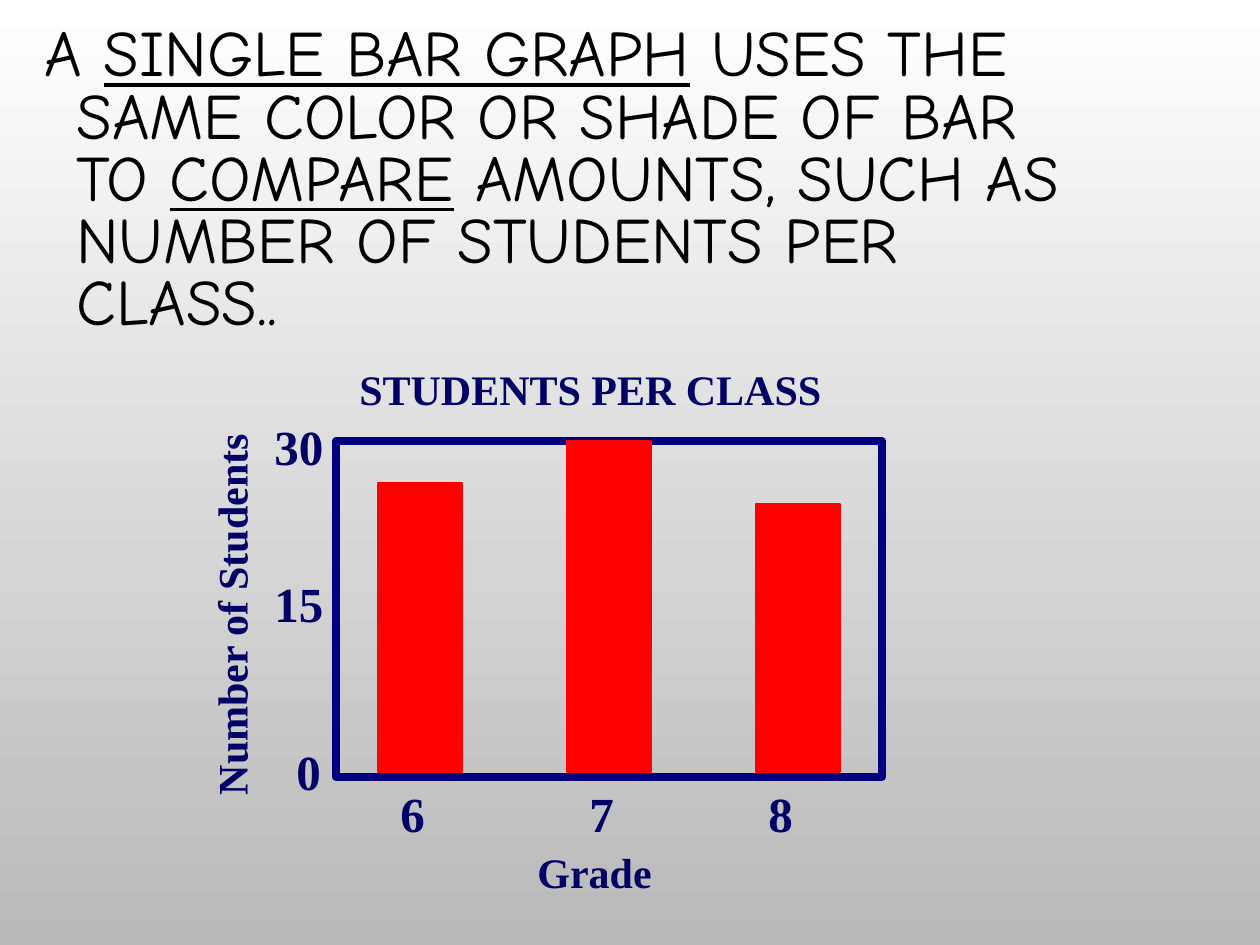
from pptx import Presentation
from pptx.dml.color import RGBColor
from pptx.enum.shapes import MSO_SHAPE
from pptx.util import Emu, Pt

WHITE = RGBColor(0xFF, 0xFF, 0xFF)
GREY = RGBColor(0xB9, 0xB9, 0xB9)
BLACK = RGBColor(0, 0, 0)
NAVY = RGBColor(0, 0, 0x80)
INK = RGBColor(0, 0, 0x66)
RED = RGBColor(0xFF, 0, 0)

INTRO = [
    ("A ", False),
    ("SINGLE BAR GRAPH", True),
    (" USES THE SAME COLOR OR SHADE OF BAR TO ", False),
    ("COMPARE", True),
    (" AMOUNTS, SUCH AS NUMBER OF STUDENTS PER CLASS..", False),
]


def px(n):
    """Turn pixels, 126 to the inch, into EMU."""
    return Emu(round(n * 914400 / 126))


class Page:
    """Style and drawing methods for one slide."""

    body = "Comic Neue"
    label_font = "Times New Roman"

    def __init__(self, slide):
        self.slide = slide

    def shade(self, top, bottom):
        fill = self.slide.background.fill
        fill.gradient()
        fill.gradient_angle = 270
        for stop, color in zip(fill.gradient_stops, (top, bottom)):
            stop.color.rgb = color

    def box(self, x, y, w, h):
        shape = self.slide.shapes.add_textbox(px(x), px(y), px(w), px(h))
        shape.text_frame.word_wrap = True
        return shape

    def intro(self, runs, x, y, w, h):
        """Add a paragraph with a hanging indent and underlined terms."""
        para = self.box(x, y, w, h).text_frame.paragraphs[0]
        props = para._p.get_or_add_pPr()
        props.set("marL", str(px(32)))
        props.set("indent", str(px(-32)))
        para.line_spacing = 0.8
        for text, under in runs:
            run = para.add_run()
            run.text = text
            font = run.font
            font.name, font.size = self.body, Pt(37)
            font.color.rgb = BLACK
            font.underline = under

    def label(self, text, x, y, w, h, size, turn=0):
        shape = self.box(x, y, w, h)
        shape.rotation = turn
        para = shape.text_frame.paragraphs[0]
        para.text = text
        font = para.font
        font.name, font.size, font.bold = self.label_font, Pt(size), True
        font.color.rgb = INK

    def rect(self, x, y, w, h, line, width, fill=None):
        shape = self.slide.shapes.add_shape(
            MSO_SHAPE.RECTANGLE, px(x), px(y), px(w), px(h))
        shape.shadow.inherit = False
        shape.line.color.rgb = line
        shape.line.width = Pt(width)
        if fill is None:
            shape.fill.background()
        else:
            shape.fill.solid()
            shape.fill.fore_color.rgb = fill


def main():
    deck = Presentation()
    deck.slide_width, deck.slide_height = px(1260), px(945)
    page = Page(deck.slides.add_slide(deck.slide_layouts[6]))
    page.shade(WHITE, GREY)
    page.intro(INTRO, 32, 21, 1081, 336)

    page.rect(336, 441, 546, 336, NAVY, 4.5)
    for text, x, y, w in (("0", 284, 735, 63), ("15", 262, 567, 105),
                          ("30", 262, 410, 105)):
        page.label(text, x, y, w, 72, 28)

    base = 772
    for i, (grade, x, tall) in enumerate(
            (("6", 388, 289), ("7", 577, 331), ("8", 756, 268))):
        page.label(grade, x, 777, 63, 72, 28)
        page.rect(378 + 189 * i, base - tall, 84, tall, RED, 0.75, RED)

    page.label("STUDENTS PER CLASS", 347, 357, 504, 63, 24)
    page.label("Number of Students", 37, 582, 388, 63, 24, turn=270)
    page.label("Grade", 525, 840, 158, 63, 24)
    deck.save("out.pptx")


if __name__ == "__main__":
    main()
